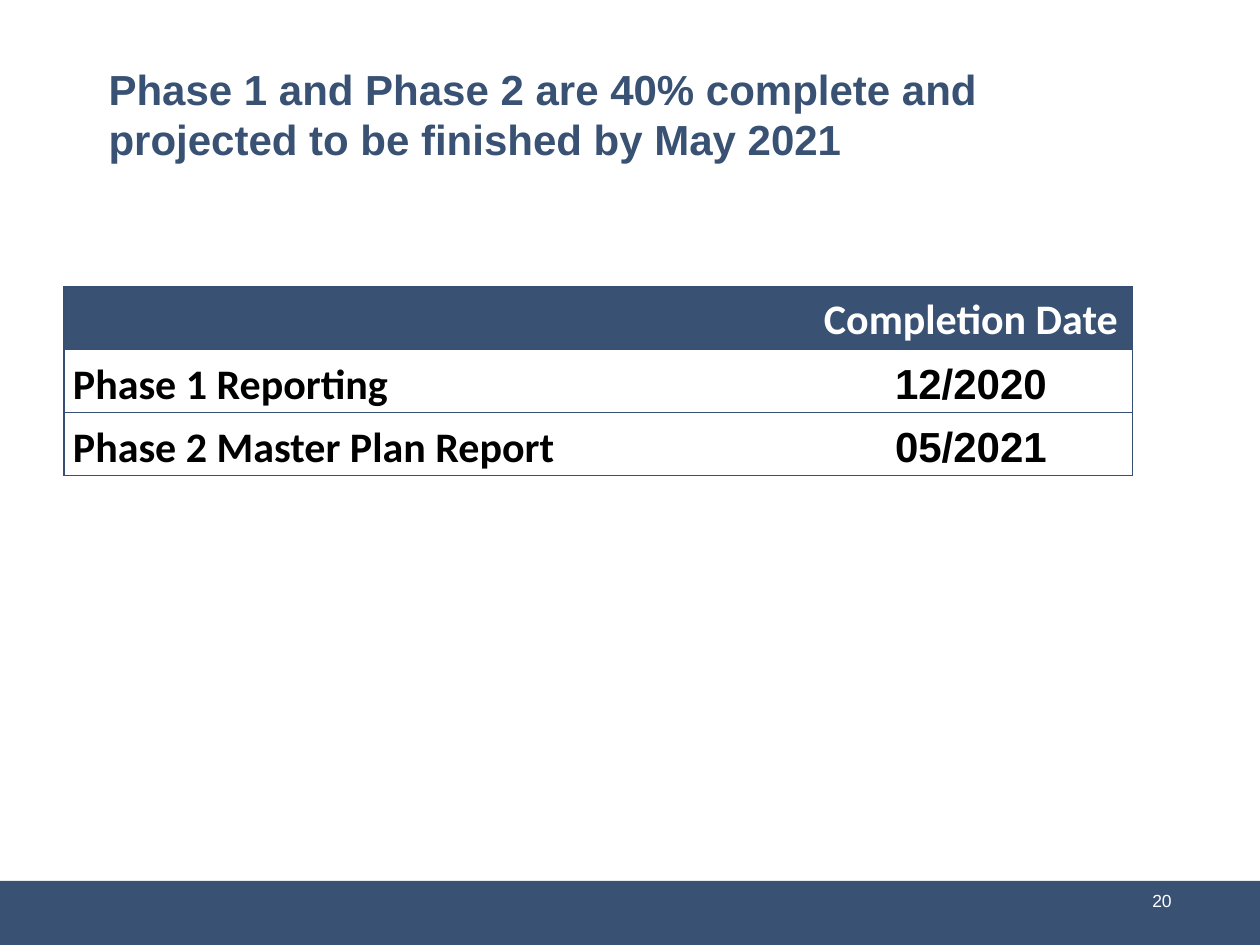
from dataclasses import dataclass

from lxml.etree import SubElement
from pptx import Presentation
from pptx.dml.color import RGBColor
from pptx.enum.shapes import MSO_SHAPE as Shape
from pptx.enum.text import MSO_ANCHOR as Anchor, MSO_AUTO_SIZE as AutoSize, PP_ALIGN as Align
from pptx.oxml import parse_xml
from pptx.oxml.ns import nsdecls, qn
from pptx.util import Pt

PX = 914400 // 126  # EMU in one px
NAVY = RGBColor(0x39, 0x51, 0x73)
BORDER = RGBColor(0x36, 0x4F, 0x72)
WHITE = RGBColor(0xFF, 0xFF, 0xFF)
BLACK = RGBColor(0x00, 0x00, 0x00)

COLUMN_WIDTHS = (745, 324)
ROW_HEIGHT = 63


@dataclass
class Entry:
    text: str
    edges: str
    font: str = "Calibri"
    color: RGBColor = BLACK
    fill: RGBColor = WHITE
    align: Align = Align.LEFT
    anchor: Anchor = Anchor.MIDDLE


def phase_row(phase: str, date: str) -> tuple[Entry, Entry]:
    return Entry(phase, "LTB"), Entry(date, "RTB", "Arial", align=Align.CENTER)


SCHEDULE = (
    (Entry("", "LTB", fill=NAVY),
     Entry("Completion Date", "RTB", color=WHITE, fill=NAVY, align=Align.CENTER,
           anchor=Anchor.TOP)),
    phase_row("Phase 1 Reporting", "12/2020"),
    phase_row("Phase 2 Master Plan Report", "05/2021"),
)


def px(*lengths: int) -> list[int]:
    return [length * PX for length in lengths]


def add_text(paragraph, text: str, font: str, size: int, color: RGBColor,
             bold: bool = False) -> None:
    run = paragraph.add_run()
    run.text = text
    run.font.name = font
    run.font.size = Pt(size)
    run.font.bold = bold
    run.font.color.rgb = color


def set_borders(cell, edges: str) -> None:
    """Draw the named edges of a cell and hide the others."""
    properties = cell._tc.get_or_add_tcPr()
    for position, edge in enumerate("LRTB"):
        line = parse_xml(f'<a:ln{edge} {nsdecls("a")} w="{Pt(0.75)}"/>')
        if edge in edges:
            fill = SubElement(line, qn("a:solidFill"))
            SubElement(fill, qn("a:srgbClr"), val=str(BORDER))
        else:
            SubElement(line, qn("a:noFill"))
        properties.insert(position, line)


def fill_cell(cell, entry: Entry) -> None:
    cell.fill.solid()
    cell.fill.fore_color.rgb = entry.fill
    cell.margin_left = cell.margin_right = 9 * PX
    cell.margin_top = cell.margin_bottom = 0
    cell.vertical_anchor = entry.anchor
    set_borders(cell, entry.edges)
    if entry.text:
        paragraph = cell.text_frame.paragraphs[0]
        paragraph.alignment = entry.align
        paragraph.line_spacing = 1.15
        add_text(paragraph, entry.text, entry.font, 24, entry.color, bold=True)


def main() -> None:
    deck = Presentation()
    deck.slide_width, deck.slide_height = px(1260, 945)
    slide = deck.slides.add_slide(deck.slide_layouts[5])
    shapes = slide.shapes

    # Footer band
    band = shapes.add_shape(Shape.RECTANGLE, *px(0, 881, 1260, 64))
    band.shadow.inherit = False
    band.fill.solid()
    band.fill.fore_color.rgb = NAVY
    band.line.fill.background()

    # Title
    title = shapes.title
    title.left, title.top, title.width, title.height = px(96, 77, 1068, 73)
    heading = title.text_frame
    heading.word_wrap = True
    heading.auto_size = AutoSize.NONE
    heading.vertical_anchor = Anchor.MIDDLE
    heading.paragraphs[0].alignment = Align.LEFT
    add_text(heading.paragraphs[0],
             "Phase 1 and Phase 2 are 40% complete and projected to be finished by May 2021",
             "Arial", 24, NAVY, bold=True)

    # Page number
    page = shapes.add_textbox(*px(901, 876, 283, 50)).text_frame
    page.word_wrap = True
    page.vertical_anchor = Anchor.MIDDLE
    page.paragraphs[0].alignment = Align.RIGHT
    add_text(page.paragraphs[0], "20", "Arial", 10, WHITE)

    # Completion schedule
    table = shapes.add_table(
        len(SCHEDULE), len(COLUMN_WIDTHS),
        *px(64, 287, sum(COLUMN_WIDTHS), ROW_HEIGHT * len(SCHEDULE))).table
    table.first_row = table.horz_banding = False
    for column, width in zip(table.columns, COLUMN_WIDTHS):
        column.width = width * PX
    for row, entries in zip(table.rows, SCHEDULE):
        row.height = ROW_HEIGHT * PX
        for cell, entry in zip(row.cells, entries):
            fill_cell(cell, entry)

    deck.save("out.pptx")


if __name__ == "__main__":
    main()
